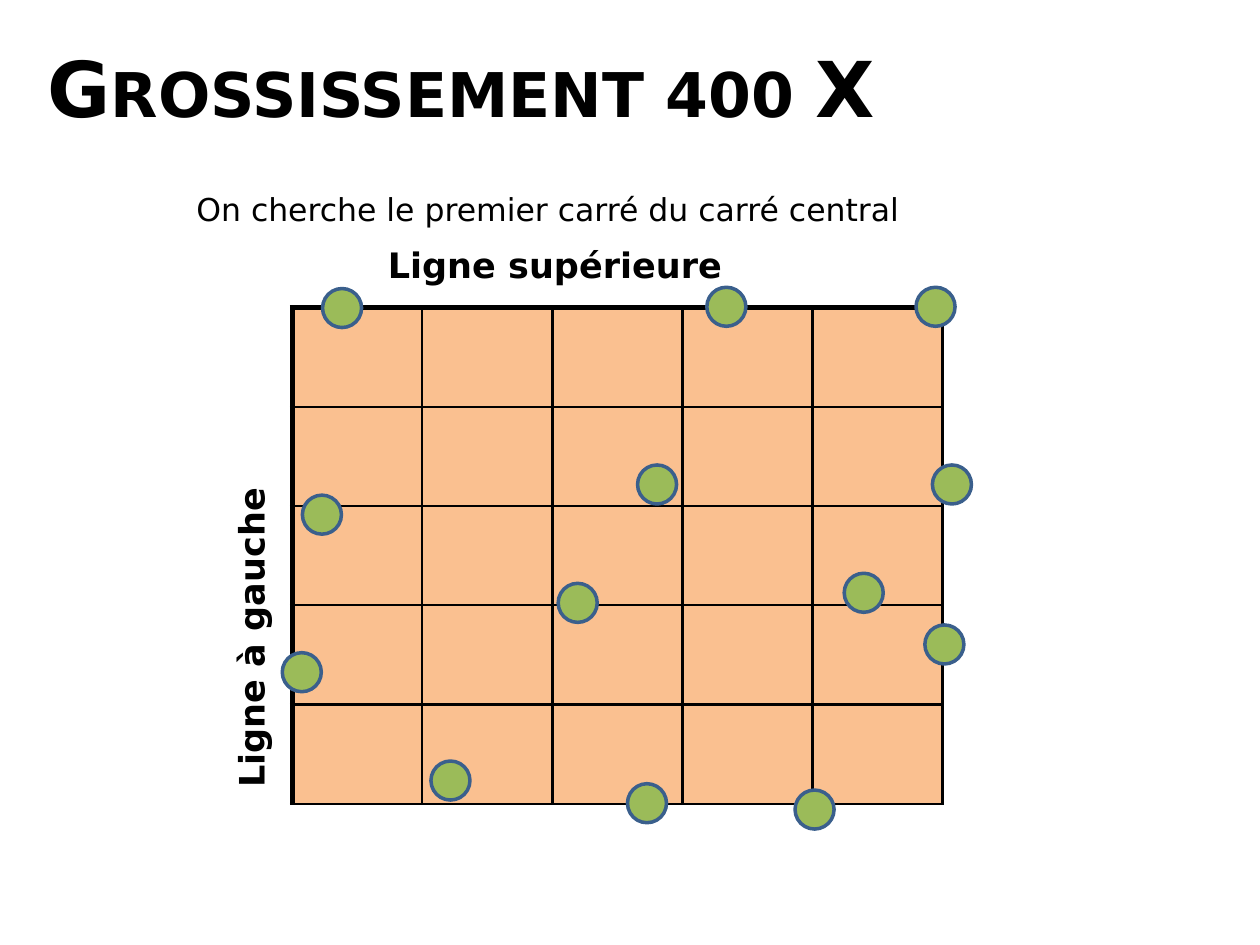
from lxml import etree
from pptx import Presentation
from pptx import util as u
from pptx.dml.color import RGBColor
from pptx.enum import shapes, text
from pptx.oxml.ns import qn

BLACK = RGBColor(0x00, 0x00, 0x00)
PEACH = RGBColor(0xFA, 0xC0, 0x90)
GREEN = RGBColor(0x9B, 0xBB, 0x59)
BLUE = RGBColor(0x3A, 0x5F, 0x8C)

FONT = "DejaVu Sans"
SIDE = 5
DOT = 0.31
THIN, THICK = 1.5, 3

# Left and top of each cell seen on the counting grid
DOTS = [
    (2.4, 3.93), (4.43, 4.63), (6.7, 4.55), (6.31, 6.27), (2.24, 5.18),
    (7.4, 3.69), (2.56, 2.29), (3.42, 6.04), (7.34, 4.96), (5.06, 3.69),
    (5.61, 2.28), (4.98, 6.22), (7.27, 2.28),
]


class Page:
    def __init__(self, slide, font):
        self.slide = slide
        self.font = font

    def label(self, words, left, top, width, height, size, bold=True, turn=0):
        box = self.slide.shapes.add_textbox(
            u.Inches(left), u.Inches(top), u.Inches(width), u.Inches(height))
        box.rotation = turn
        frame = box.text_frame
        frame.word_wrap = True
        frame.vertical_anchor = text.MSO_ANCHOR.MIDDLE
        para = frame.paragraphs[0]
        run = para.add_run()
        run.text = words
        font = para.font
        font.name, font.size, font.bold = self.font, u.Pt(size), bold
        font.color.rgb = BLACK
        return run

    def title(self, words, *place):
        """Add a heading in small capitals."""
        run = self.label(words, *place, size=44)
        run.font._element.set("cap", "small")

    def border(self, cell, edge, width):
        """Rule one edge (L, R, T or B) of a table cell."""
        props = cell._tc.get_or_add_tcPr()
        line = etree.SubElement(props, qn(f"a:ln{edge}"), w=str(u.Pt(width)))
        fill = etree.SubElement(line, qn("a:solidFill"))
        etree.SubElement(fill, qn("a:srgbClr"), val=str(BLACK))

    def grid(self, left, top, width, height):
        """Add the square grid, with heavy lines at its left and top."""
        table = self.slide.shapes.add_table(
            SIDE, SIDE, u.Inches(left), u.Inches(top),
            u.Inches(width), u.Inches(height)).table
        table.first_row = table.horz_banding = False
        for row in range(SIDE):
            for col in range(SIDE):
                cell = table.cell(row, col)
                self.border(cell, "L", THIN if col else THICK)
                self.border(cell, "R", THIN)
                self.border(cell, "T", THIN if row else THICK)
                self.border(cell, "B", THIN)
                cell.fill.solid()
                cell.fill.fore_color.rgb = PEACH

    def dot(self, left, top):
        dot = self.slide.shapes.add_shape(
            shapes.MSO_SHAPE.OVAL, u.Inches(left), u.Inches(top),
            u.Inches(DOT), u.Inches(DOT))
        dot.shadow.inherit = False
        dot.fill.solid()
        dot.fill.fore_color.rgb = GREEN
        dot.line.color.rgb = BLUE
        dot.line.width = u.Pt(2)


def main():
    deck = Presentation()
    deck.slide_width, deck.slide_height = u.Inches(10), u.Inches(7.5)
    page = Page(deck.slides.add_slide(deck.slide_layouts[6]), FONT)

    page.grid(2.32, 2.44, 5.16, 3.94)
    for left, top in DOTS:
        page.dot(left, top)

    page.label("On cherche le premier carré du carré central",
               1.46, 1.46, 7.8, 0.4, 18, bold=False)
    page.label("Ligne supérieure", 2.98, 1.88, 3.98, 0.44, 20)
    page.label("Ligne à gauche", 0, 4.14, 3.98, 0.44, 20, turn=270)
    page.title("Grossissement 400 X", 0.28, 0.06, 9, 1.25)

    deck.save("out.pptx")


if __name__ == "__main__":
    main()
